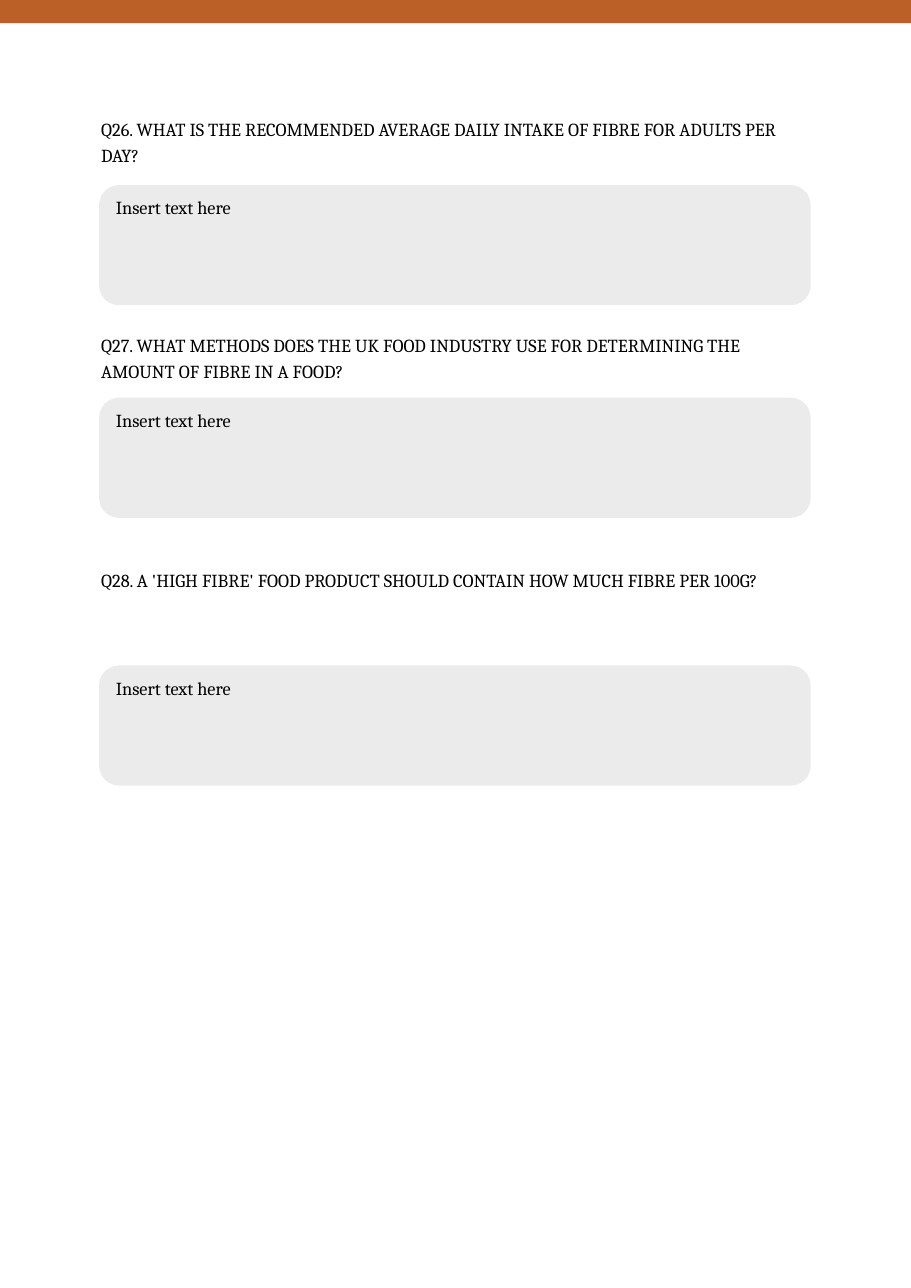
from pptx import Presentation
from pptx.dml.color import RGBColor
from pptx.enum.shapes import MSO_SHAPE
from pptx.enum.text import MSO_ANCHOR, PP_ALIGN
from pptx.util import Pt

EMU_PER_PX = 9144  # 100 px to the inch
PAGE_WIDTH, PAGE_HEIGHT = 827, 1169
BAND_HEIGHT = 21
QUESTION_LEFT, QUESTION_HEIGHT = 82, 59
ANSWER_LEFT, ANSWER_HEIGHT = 90, 109
COLUMN_WIDTH = 646

RECTANGLE = MSO_SHAPE.RECTANGLE
ROUNDED = MSO_SHAPE.ROUNDED_RECTANGLE
TOP = MSO_ANCHOR.TOP
LEFT = PP_ALIGN.LEFT

ORANGE = RGBColor(0xBB, 0x61, 0x28)
GREY = RGBColor(0xEB, 0xEB, 0xEB)
BLACK = RGBColor(0, 0, 0)
FONT = "Cambria"

# Question, its top and the top of its answer box
QUESTIONS = [
    ("Q26. WHAT IS THE RECOMMENDED AVERAGE DAILY INTAKE OF FIBRE "
     "FOR ADULTS PER DAY?", 98, 168),
    ("Q27. WHAT METHODS DOES THE UK FOOD INDUSTRY USE FOR DETERMINING "
     "THE AMOUNT OF FIBRE IN A FOOD?", 294, 361),
    ("Q28. A 'HIGH FIBRE' FOOD PRODUCT SHOULD CONTAIN HOW MUCH FIBRE "
     "PER 100G?", 508, 604),
]


def px(*lengths):
    return [length * EMU_PER_PX for length in lengths]


def set_text(shape, text, line_spacing=1.0):
    text_frame = shape.text_frame
    text_frame.word_wrap = True
    text_frame.vertical_anchor = TOP
    text_frame.text = text
    paragraph = text_frame.paragraphs[0]
    paragraph.alignment = LEFT
    paragraph.line_spacing = line_spacing
    font = paragraph.runs[0].font
    font.name = FONT
    font.size = Pt(12)
    font.color.rgb = BLACK


def add_panel(slide, kind, left, top, width, height, color):
    shape = slide.shapes.add_shape(kind, *px(left, top, width, height))
    shape.shadow.inherit = False
    shape.fill.solid()
    shape.fill.fore_color.rgb = color
    shape.line.fill.background()
    return shape


def add_question(slide, text, top):
    box = slide.shapes.add_textbox(
        *px(QUESTION_LEFT, top, COLUMN_WIDTH, QUESTION_HEIGHT))
    set_text(box, text, line_spacing=1.2)


def add_answer(slide, top):
    panel = add_panel(slide, ROUNDED, ANSWER_LEFT, top,
                      COLUMN_WIDTH, ANSWER_HEIGHT, GREY)
    set_text(panel, "Insert text here")


def main():
    presentation = Presentation()
    presentation.slide_width, presentation.slide_height = px(
        PAGE_WIDTH, PAGE_HEIGHT)
    slide = presentation.slides.add_slide(presentation.slide_layouts[6])

    # Top band
    add_panel(slide, RECTANGLE, 0, 0, PAGE_WIDTH, BAND_HEIGHT, ORANGE)

    # Questions with answer boxes
    for text, question_top, answer_top in QUESTIONS:
        add_question(slide, text, question_top)
        add_answer(slide, answer_top)

    presentation.save("out.pptx")


if __name__ == "__main__":
    main()
